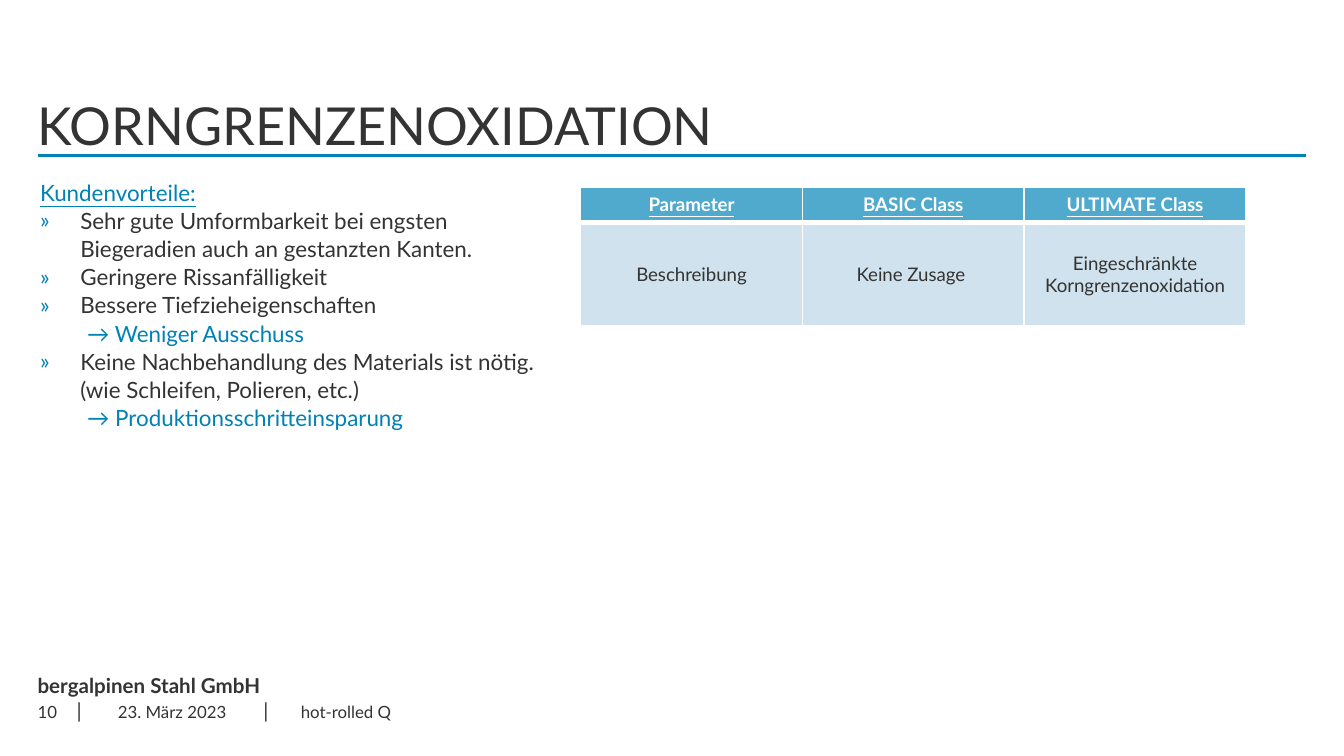
from pptx import Presentation
from pptx.dml.color import RGBColor
from pptx.enum.shapes import MSO_CONNECTOR
from pptx.enum.text import MSO_ANCHOR, PP_ALIGN
from pptx.oxml import parse_xml
from pptx.oxml.ns import nsdecls
from pptx.util import Inches, Pt

COLORS = {"ink": "333333", "blue": "0082B4", "header": "50AACD",
          "cell": "D0E2ED", "white": "FFFFFF"}
UNIT = Inches(0.1)  # grid step: the slide is 100 columns by 56.25 rows
LEFT, RIGHT = 2.8, 97.2  # page margins in columns
NO_INSET = {"margin_left": 0, "margin_right": 0, "margin_top": 0, "margin_bottom": 0}


def write(paragraph, text, color="ink", **formats):
    span = paragraph.add_run()
    span.text = text
    span.font.name = "Lato"
    span.font.color.rgb = RGBColor.from_string(COLORS[color])
    for name, value in formats.items():
        setattr(span.font, name, value)


def add_box(column, row, width, height, **formats):
    """Add a wrapping text box placed on the grid and return its text frame."""
    box = page.shapes.add_textbox(*(round(n * UNIT) for n in (column, row, width, height)))
    for name, value in {"word_wrap": True, **formats}.items():
        setattr(box.text_frame, name, value)
    return box.text_frame


deck = Presentation()
deck.slide_width, deck.slide_height = 100 * UNIT, round(56.25 * UNIT)
page = deck.slides.add_slide(deck.slide_layouts[5])

# Title and rule
title = page.shapes.title
title.left, title.top = round(LEFT * UNIT), round(1.9 * UNIT)
title.width, title.height = round((RIGHT - LEFT) * UNIT), round(9.7 * UNIT)
for name, value in {**NO_INSET, "vertical_anchor": MSO_ANCHOR.BOTTOM}.items():
    setattr(title.text_frame, name, value)
heading = title.text_frame.paragraphs[0]
heading.alignment, heading.line_spacing = PP_ALIGN.LEFT, Pt(32)
write(heading, "KORNGRENZENOXIDATION", size=Pt(28))

rule = page.shapes.add_connector(MSO_CONNECTOR.STRAIGHT, *(
    round(n * UNIT) for n in (LEFT, 11.6, RIGHT, 11.6)))
rule.line.color.rgb = RGBColor.from_string(COLORS["blue"])
rule.line.width = Pt(1.5)
rule._element.spPr.append(parse_xml(f"<a:effectLst {nsdecls('a')}/>"))

# Customer benefits
benefits = [
    ("heading", "Kundenvorteile:"),
    ("bullet", "Sehr gute Umformbarkeit bei engsten Biegeradien auch an gestanzten Kanten."),
    ("bullet", "Geringere Rissanfälligkeit"),
    ("bullet", "Bessere Tiefzieheigenschaften"),
    ("result", "→ Weniger Ausschuss"),
    ("bullet", "Keine Nachbehandlung des Materials ist nötig. (wie Schleifen, Polieren, etc.)"),
    ("result", "→ Produktionsschritteinsparung"),
]
indents = {"heading": (0, 0), "bullet": (3, -3), "result": (3.5, 0)}
frame = add_box(2, 12.8, 39, 19.8)
for index, (kind, text) in enumerate(benefits):
    paragraph = frame.add_paragraph() if index else frame.paragraphs[0]
    properties = paragraph._p.get_or_add_pPr()
    for name, columns in zip(("marL", "indent"), indents[kind]):
        properties.set(name, str(round(columns * UNIT)))
    if kind != "heading":
        paragraph.line_spacing = 1.05
    if kind == "bullet":
        properties.append(parse_xml(
            f'<a:buClr {nsdecls("a")}><a:srgbClr val="{COLORS["blue"]}"/></a:buClr>'))
        properties.append(parse_xml(f'<a:buFont {nsdecls("a")} typeface="Lato"/>'))
        properties.append(parse_xml(f'<a:buChar {nsdecls("a")} char="»"/>'))
    write(paragraph, text, "ink" if kind == "bullet" else "blue",
          size=Pt(12), underline=kind == "heading")

# Class comparison
rows = [("Parameter", "BASIC Class", "ULTIMATE Class"),
        ("Beschreibung", "Keine Zusage ", "Eingeschränkte Korngrenzenoxidation")]
table = page.shapes.add_table(2, 3, *(
    round(n * UNIT) for n in (43.2, 13.9, 49.5, 10.2))).table
for row, height in zip(table.rows, (2.5, 7.7)):
    row.height = round(height * UNIT)
for r, texts in enumerate(rows):
    is_header = r == 0
    for c, text in enumerate(texts):
        cell = table.cell(r, c)
        cell.vertical_anchor = MSO_ANCHOR.TOP if is_header else MSO_ANCHOR.MIDDLE
        # Borders come before the fill in the cell properties
        for side in "LRTB":
            thick = (is_header and side == "B") or (not is_header and side == "T")
            cell._tc.get_or_add_tcPr().append(parse_xml(
                f'<a:ln{side} {nsdecls("a")} w="{Pt(3 if thick else 1)}"><a:solidFill>'
                f'<a:srgbClr val="{COLORS["white"]}"/></a:solidFill></a:ln{side}>'))
        cell.fill.solid()
        cell.fill.fore_color.rgb = RGBColor.from_string(COLORS["header" if is_header else "cell"])
        paragraph = cell.text_frame.paragraphs[0]
        paragraph.alignment = PP_ALIGN.CENTER
        write(paragraph, text, "white" if is_header else "ink",
              size=Pt(10), bold=is_header, underline=is_header)

# Footer
company = add_box(LEFT, 50.1, 64.4, 1.9, **NO_INSET)
write(company.paragraphs[0], "bergalpinen Stahl GmbH", size=Pt(11), bold=True)
for column in (5.7, 19.6):
    divider = add_box(column, 51.9, 2.2, 1.9, **NO_INSET)
    write(divider.paragraphs[0], "|", size=Pt(11))
footer = [
    ("10", LEFT, 3.1, PP_ALIGN.LEFT, NO_INSET),
    ("23. März 2023", 5.9, 13.8, PP_ALIGN.CENTER, {}),
    ("hot-rolled Q", 21.4, 45.6, PP_ALIGN.LEFT, {}),
]
for text, column, width, alignment, insets in footer:
    frame = add_box(column, 51.5, width, 3, vertical_anchor=MSO_ANCHOR.MIDDLE, **insets)
    frame.paragraphs[0].alignment = alignment
    write(frame.paragraphs[0], text, size=Pt(9))

deck.save("out.pptx")
